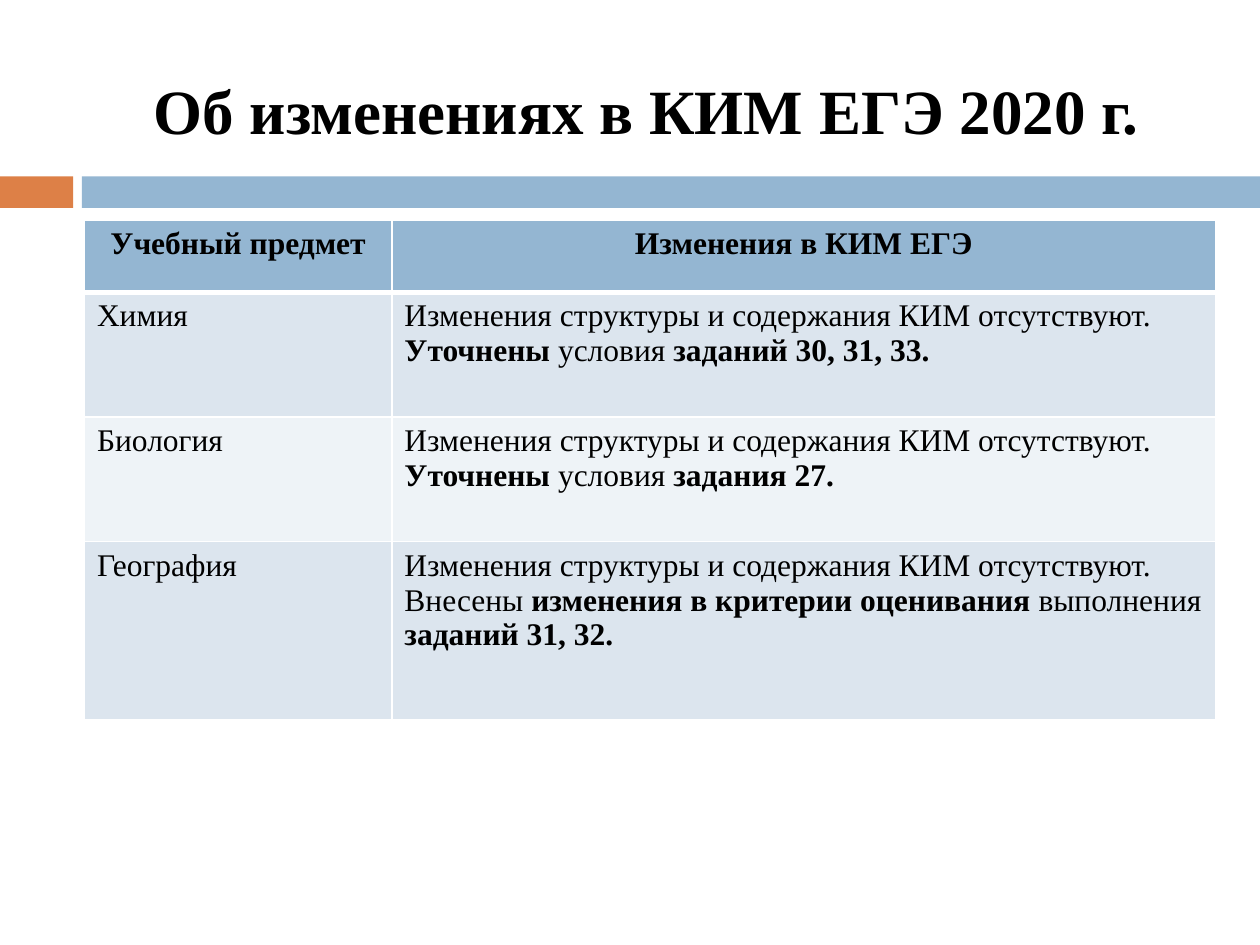
"""Build a slide on the 2020 exam changes with a title, two bars and a table."""
from lxml import etree
from pptx import Presentation
from pptx.dml.color import RGBColor
from pptx.enum import shapes, text
from pptx.oxml import ns
from pptx.util import Inches, Pt

TITLE = "Об изменениях в КИМ ЕГЭ 2020 г."
UNCHANGED = "Изменения структуры и содержания КИМ отсутствуют."
ROWS = [
    (0.57, "94B6D2", ["**Учебный предмет"], ["**Изменения в КИМ ЕГЭ"]),
    (0.99, "DCE5EE", ["Химия"],
     [UNCHANGED, "**Уточнены** условия **заданий 30, 31, 33."]),
    (0.99, "EEF3F7", ["Биология"],
     [UNCHANGED, "**Уточнены **условия **задания 27."]),
    (1.41, "DCE5EE", ["География"],
     [UNCHANGED, "Внесены **изменения в критерии оценивания **выполнения **заданий 31, 32."]),
]
COLUMNS = [2.44, 6.54]
BARS = [(0, 0.58, "DD8047"), (0.65, 9.35, "94B6D2")]
FONT = {"name": "Times New Roman"}
TITLE_FRAME = {"word_wrap": True, "vertical_anchor": text.MSO_ANCHOR.MIDDLE,
               "margin_top": Inches(0.21)}


def apply(target, formats):
    for name, value in formats.items():
        setattr(target, name, value)


def paint(fill, color):
    fill.solid()
    fill.fore_color.rgb = RGBColor.from_string(color)


def write(frame, lines, size, align):
    for index, line in enumerate(lines):
        paragraph = frame.paragraphs[0] if index == 0 else frame.add_paragraph()
        paragraph.alignment = align
        for part, words in enumerate(line.split("**")):
            if words:
                run = paragraph.add_run()
                run.text = words
                apply(run.font, {**FONT, "size": Pt(size), "bold": part % 2 == 1})
                paint(run.font.fill, "000000")


def add_borders(cell, top, bottom):
    properties = cell._tc.get_or_add_tcPr()
    for side, width in {"L": 1, "R": 1, "T": top, "B": bottom}.items():
        line = etree.SubElement(properties, ns.qn(f"a:ln{side}"), w=str(Pt(width)))
        fill = etree.SubElement(line, ns.qn("a:solidFill"))
        etree.SubElement(fill, ns.qn("a:srgbClr"), val="FFFFFF")


def main():
    deck = Presentation()
    apply(deck, {"slide_width": Inches(10), "slide_height": Inches(7.5)})
    slide = deck.slides.add_slide(deck.slide_layouts[6])

    for left, width, color in BARS:
        bar = slide.shapes.add_shape(shapes.MSO_SHAPE.RECTANGLE, Inches(left),
                                     Inches(1.4), Inches(width), Inches(0.25))
        bar.shadow.inherit = False
        paint(bar.fill, color)
        bar.line.fill.background()

    title = slide.shapes.add_textbox(Inches(0.67), Inches(0.25), Inches(8.92), Inches(1.08))
    apply(title.text_frame, TITLE_FRAME)
    write(title.text_frame, ["**" + TITLE], 36, text.PP_ALIGN.CENTER)

    height = sum(row[0] for row in ROWS)
    changes = slide.shapes.add_table(len(ROWS), len(COLUMNS), Inches(0.67), Inches(1.75),
                                     Inches(sum(COLUMNS)), Inches(height)).table
    for column, width in zip(changes.columns, COLUMNS):
        column.width = Inches(width)
    for index, (height, color, *contents) in enumerate(ROWS):
        changes.rows[index].height = Inches(height)
        align = text.PP_ALIGN.CENTER if index == 0 else text.PP_ALIGN.LEFT
        for column, lines in enumerate(contents):
            cell = changes.cell(index, column)
            add_borders(cell, 3 if index == 1 else 1, 3 if index == 0 else 1)
            paint(cell.fill, color)
            write(cell.text_frame, lines, 18, align)

    deck.save("out.pptx")


if __name__ == "__main__":
    main()
